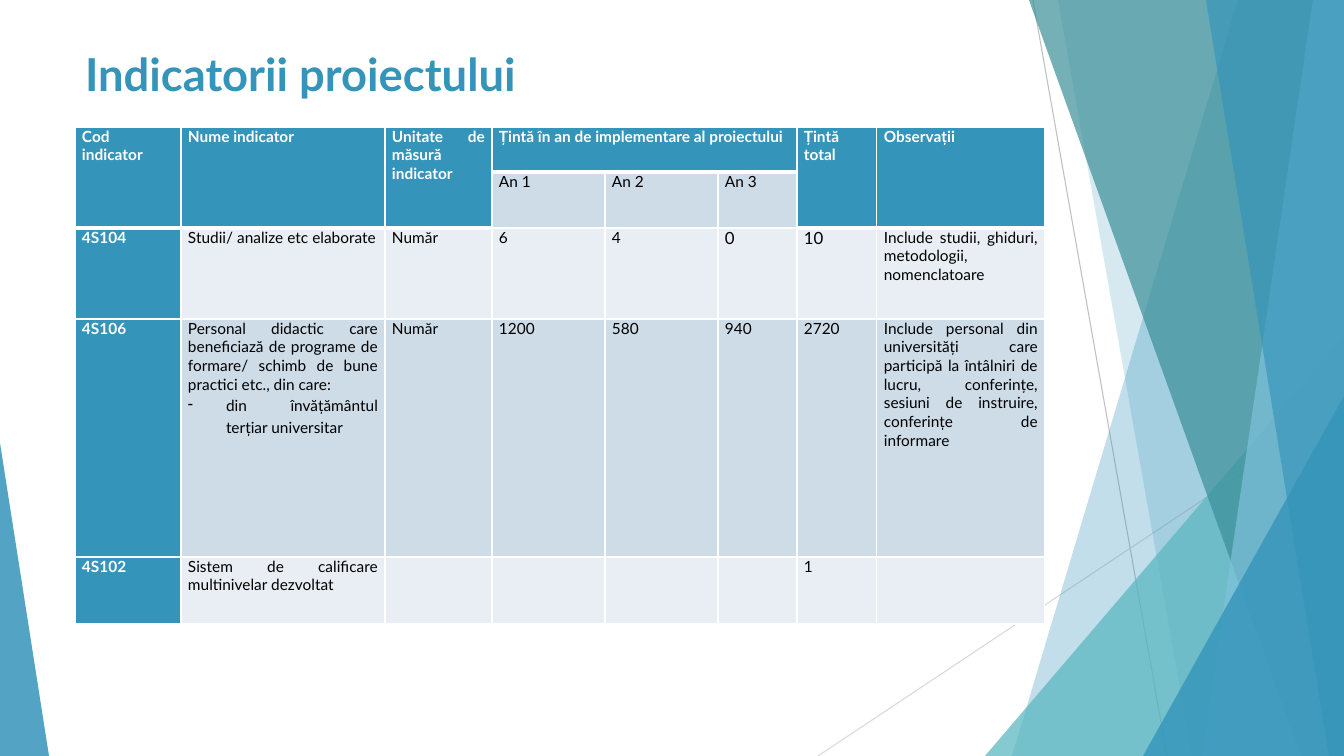
from dataclasses import dataclass
from typing import Optional, Union

import lxml.etree
import pptx
import pptx.dml.color
import pptx.enum.dml
import pptx.enum.shapes
import pptx.enum.text
import pptx.oxml.ns
import pptx.util

RGB = pptx.dml.color.RGBColor
ALIGN = pptx.enum.text.PP_ALIGN
qn = pptx.oxml.ns.qn

# Colours and type
BLUE = RGB(0x34, 0x94, 0xBA)
TEAL = RGB(0x58, 0xB6, 0xC0)
DARK_TEAL = RGB(0x3A, 0x8F, 0x98)
LIGHT_BLUE = RGB(0x7F, 0xC1, 0xDB)
BAND_DARK = RGB(0xCE, 0xDC, 0xE7)
BAND_LIGHT = RGB(0xE8, 0xEE, 0xF3)
GREY = RGB(0xBF, 0xBF, 0xBF)
LIGHT_GREY = RGB(0xD9, 0xD9, 0xD9)
WHITE = RGB(0xFF, 0xFF, 0xFF)
BLACK = RGB(0x00, 0x00, 0x00)
FONT = "Lato"

# Slide size in px
WIDTH, HEIGHT = 1344, 756
EMU_PER_PX = 12192000 / WIDTH


@dataclass(frozen=True)
class Ray:
    start: tuple[int, int]
    end: tuple[int, int]
    color: RGB


@dataclass(frozen=True)
class Facet:
    """Band from a slanted left edge to the right edge of the slide."""
    top_x: int
    bottom_x: int
    color: RGB
    opacity: int


@dataclass(frozen=True)
class Wedge:
    """Triangle standing on the bottom edge of the slide."""
    left: int
    top: int
    width: int
    apex: int
    color: RGB
    opacity: int


@dataclass(frozen=True)
class Indicator:
    code: str
    name: str
    unit: str
    years: tuple[str, str, str]
    total: str
    note: str
    detail: str = ""


DECORATION: list[Union[Ray, Facet, Wedge]] = [
    Ray((1033, 0), (1167, HEIGHT), GREY),
    Ray((WIDTH, 406), (818, HEIGHT), LIGHT_GREY),
    Facet(1238, 1012, BLUE, 30),
    Facet(1058, 1192, BLUE, 20),
    Wedge(985, 336, 359, 1, TEAL, 72),
    Facet(1029, 1301, DARK_TEAL, 70),
    Facet(1313, 1202, LIGHT_BLUE, 70),
    Facet(1206, 1329, BLUE, 65),
    Wedge(1143, 396, 201, 1, BLUE, 80),
    Wedge(0, 443, 49, 0, BLUE, 85),
]

COLUMN_WIDTHS = [106, 204, 107, 113, 113, 79, 80, 168]
ROW_HEIGHTS = [45, 56, 91, 238, 67]
YEAR_COLUMNS = range(3, 6)
HEADINGS = {
    0: "Cod indicator",
    1: "Nume indicator",
    2: "Unitate de măsură indicator",
    3: "Țintă în an de implementare al proiectului",
    6: "Țintă total",
    7: "Observații",
}
INDICATORS = [
    Indicator("4S104", "Studii/ analize etc elaborate", "Număr", ("6", "4", "0"), "10",
              "Include studii, ghiduri, metodologii, nomenclatoare"),
    Indicator("4S106", "Personal didactic care beneficiază de programe de formare/ "
              "schimb de bune practici etc., din care:", "Număr", ("1200", "580", "940"), "2720",
              "Include personal din universități care participă la întâlniri de lucru, "
              "conferințe, sesiuni de instruire, conferințe de informare",
              "din învățământul terțiar universitar"),
    Indicator("4S102", "Sistem de calificare multinivelar dezvoltat", "", ("", "", ""), "1", ""),
]
LARGE_CELLS = {(2, 5), (2, 6)}


def px(length: int) -> int:
    return round(length * EMU_PER_PX)


def add_run(paragraph, text: str, size: float, color: RGB, bold: bool = False) -> None:
    run = paragraph.add_run()
    run.text = text
    run.font.name, run.font.size, run.font.bold = FONT, pptx.util.Pt(size), bold
    run.font.color.rgb = color


def draw_ray(shapes, ray: Ray) -> None:
    line = shapes.add_connector(pptx.enum.shapes.MSO_CONNECTOR.STRAIGHT,
                                *map(px, ray.start + ray.end))
    line.line.color.rgb = ray.color
    line.line.width = pptx.util.Pt(0.75)
    lxml.etree.SubElement(line.element.spPr, qn("a:effectLst"))


def draw_pane(shapes, pane: Union[Facet, Wedge]) -> None:
    if isinstance(pane, Facet):
        builder = shapes.build_freeform(pane.top_x, 0, EMU_PER_PX)
        builder.add_line_segments([(WIDTH, 0), (WIDTH, HEIGHT), (pane.bottom_x, HEIGHT)])
        shape = builder.convert_to_shape()
    else:
        shape = shapes.add_shape(pptx.enum.shapes.MSO_SHAPE.ISOSCELES_TRIANGLE, px(pane.left),
                                 px(pane.top), px(pane.width), px(HEIGHT - pane.top))
        shape.adjustments[0] = pane.apex
    shape.shadow.inherit = False
    shape.line.fill.background()
    shape.fill.solid()
    shape.fill.fore_color.rgb = pane.color
    color = shape.element.spPr.find(qn("a:solidFill"))[0]
    lxml.etree.SubElement(color, qn("a:alpha"), val=str(pane.opacity * 1000))


def style_cell(cell, fill: RGB, bottom: int = 1) -> None:
    properties = cell._tc.get_or_add_tcPr()
    for side, points in {"L": 1, "R": 1, "T": 1, "B": bottom}.items():
        border = lxml.etree.SubElement(properties, qn(f"a:ln{side}"),
                                       w=str(pptx.util.Pt(points)))
        solid = lxml.etree.SubElement(border, qn("a:solidFill"))
        lxml.etree.SubElement(solid, qn("a:srgbClr"), val=str(WHITE))
    cell.fill.solid()
    cell.fill.fore_color.rgb = fill
    cell.margin_left = cell.margin_right = px(7)
    cell.margin_top = cell.margin_bottom = 0


def write_cell(cell, text: str, color: RGB = BLACK, bold: bool = False, size: int = 11) -> None:
    if text:
        paragraph = cell.text_frame.paragraphs[0]
        paragraph.alignment = ALIGN.JUSTIFY
        add_run(paragraph, text, size, color, bold)


def add_dash_item(cell, text: str) -> None:
    paragraph = cell.text_frame.add_paragraph()
    paragraph.alignment = ALIGN.JUSTIFY
    paragraph.line_spacing = 1.15
    paragraph.space_after = pptx.util.Pt(10)
    properties = paragraph._p.get_or_add_pPr()
    properties.set("marL", str(px(38)))
    properties.set("indent", str(-px(38)))
    lxml.etree.SubElement(properties, qn("a:buChar"), char="-")
    add_run(paragraph, text, 11, BLACK)


def add_indicator_table(shapes) -> None:
    table = shapes.add_table(len(ROW_HEIGHTS), len(COLUMN_WIDTHS), px(75), px(127),
                             px(sum(COLUMN_WIDTHS)), px(sum(ROW_HEIGHTS))).table
    table.first_row = table.horz_banding = False
    for column, width in zip(table.columns, COLUMN_WIDTHS):
        column.width = px(width)
    for row, height in zip(table.rows, ROW_HEIGHTS):
        row.height = px(height)

    # Header
    for index in range(len(COLUMN_WIDTHS)):
        is_year = index in YEAR_COLUMNS
        style_cell(table.cell(0, index), BLUE, bottom=3)
        style_cell(table.cell(1, index), BAND_DARK if is_year else BLUE, 1 if is_year else 3)
        if is_year:
            write_cell(table.cell(1, index), f"An {index - YEAR_COLUMNS.start + 1}")
        else:
            table.cell(0, index).merge(table.cell(1, index))
    table.cell(0, YEAR_COLUMNS[0]).merge(table.cell(0, YEAR_COLUMNS[-1]))
    for index, heading in HEADINGS.items():
        write_cell(table.cell(0, index), heading, WHITE, bold=True)

    # Indicators
    for row, item in enumerate(INDICATORS, start=2):
        band = BAND_DARK if row % 2 else BAND_LIGHT
        values = (item.code, item.name, item.unit, *item.years, item.total, item.note)
        for index, value in enumerate(values):
            cell = table.cell(row, index)
            is_code = index == 0
            style_cell(cell, BLUE if is_code else band)
            write_cell(cell, value, WHITE if is_code else BLACK, is_code,
                       12 if (row, index) in LARGE_CELLS else 11)
        if item.detail:
            add_dash_item(table.cell(row, 1), item.detail)


def main() -> None:
    deck = pptx.Presentation()
    deck.slide_width, deck.slide_height = px(WIDTH), px(HEIGHT)
    slide = deck.slides.add_slide(deck.slide_layouts[5])

    # Background rays and panes
    for part in DECORATION:
        if isinstance(part, Ray):
            draw_ray(slide.shapes, part)
        else:
            draw_pane(slide.shapes, part)

    # Title
    heading = slide.shapes.title
    heading.left, heading.top, heading.width, heading.height = map(px, (75, 38, 1159, 71))
    heading.text_frame.auto_size = pptx.enum.text.MSO_AUTO_SIZE.NONE
    paragraph = heading.text_frame.paragraphs[0]
    paragraph.alignment = ALIGN.LEFT
    add_run(paragraph, "Indicatorii proiectului", 32.4, BLUE, bold=True)

    add_indicator_table(slide.shapes)
    deck.save("out.pptx")


if __name__ == "__main__":
    main()
